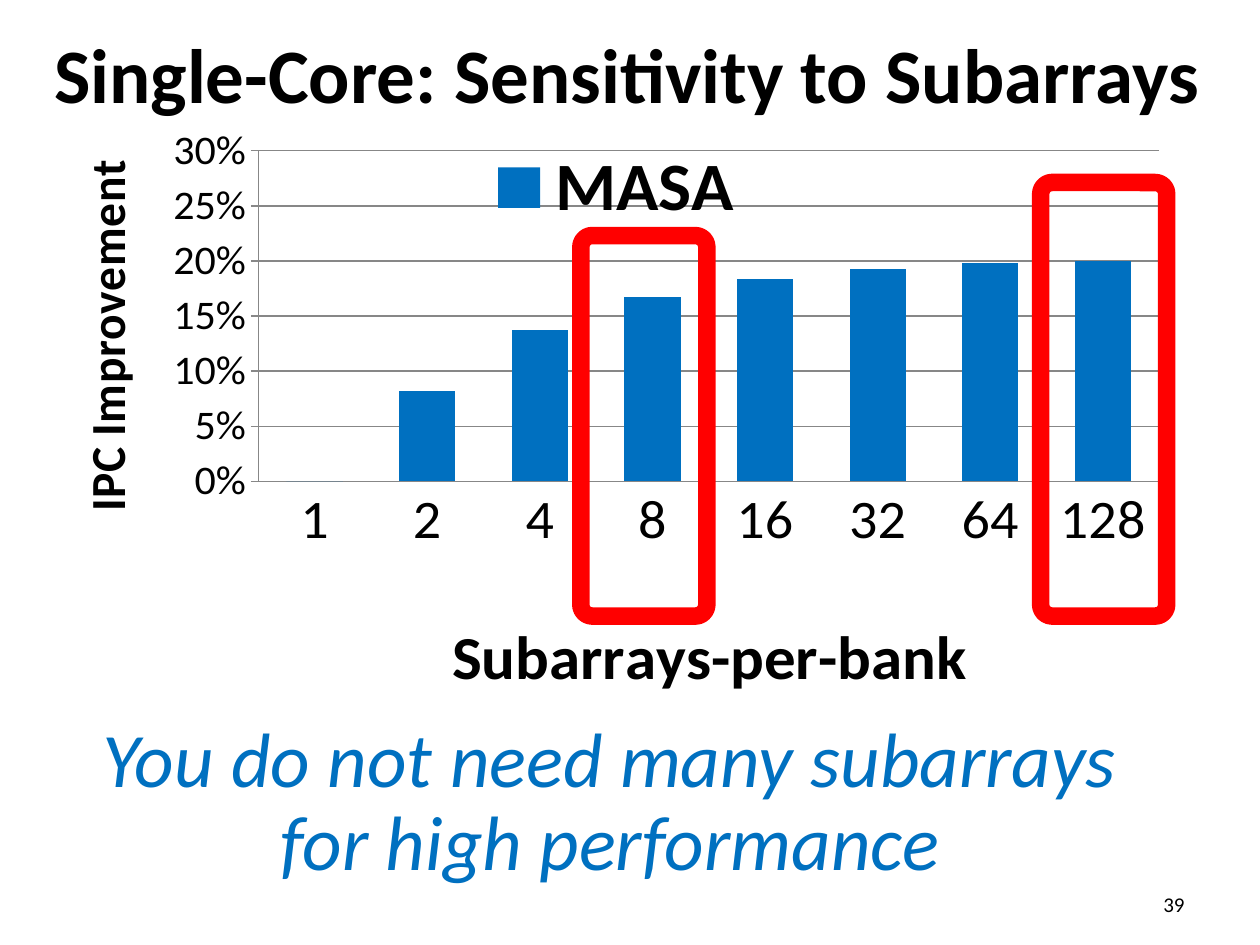
from dataclasses import dataclass
from lxml.etree import SubElement
from pptx import Presentation
from pptx.chart.data import CategoryChartData
from pptx.dml.color import RGBColor
from pptx.enum.chart import XL_CHART_TYPE, XL_LEGEND_POSITION, XL_TICK_MARK
from pptx.enum.shapes import MSO_SHAPE
from pptx.enum.text import MSO_ANCHOR, PP_ALIGN
from pptx.oxml.ns import qn
from pptx.util import Cm, Pt

FONT = "Calibri"
HUES = {"ink": "000000", "blue": "0070C0", "red": "FF0000", "grid": "878787"}


@dataclass
class Box:
    """Place on the slide, in centimetres."""
    left: float
    top: float
    width: float
    height: float

    def spots(self) -> tuple:
        """Give the place as lengths."""
        return Cm(self.left), Cm(self.top), Cm(self.width), Cm(self.height)


@dataclass
class Label:
    """Text block with its look."""
    box: Box
    text: str
    size: int
    align: PP_ALIGN = PP_ALIGN.CENTER
    anchor: MSO_ANCHOR = MSO_ANCHOR.MIDDLE
    hue: str = "ink"
    bold: bool = False
    slant: bool = False
    space: float = 1.0
    inset: float = 0.25


def hue(name: str) -> RGBColor:
    """Look up a colour."""
    return RGBColor.from_string(HUES[name])


def style(font, size: int, name: str = "ink", bold: bool = False) -> None:
    """Set the look of a font."""
    font.name, font.size, font.bold = FONT, Pt(size), bold
    font.color.rgb = hue(name)


def add_label(slide, item: Label) -> None:
    """Draw a text block."""
    frame = slide.shapes.add_textbox(*item.box.spots()).text_frame
    frame.word_wrap = True
    frame.vertical_anchor = item.anchor
    frame.margin_left = frame.margin_right = Cm(item.inset)
    para = frame.paragraphs[0]
    para.alignment, para.line_spacing = item.align, item.space
    run = para.add_run()
    run.text = item.text
    style(run.font, item.size, item.hue, item.bold)
    run.font.italic = item.slant


def add_ring(slide, box: Box) -> None:
    """Draw a red ring round one bar."""
    ring = slide.shapes.add_shape(MSO_SHAPE.ROUNDED_RECTANGLE, *box.spots())
    ring.adjustments[0] = 0.09
    ring.shadow.inherit = False
    ring.fill.background()
    ring.line.color.rgb = hue("red")
    ring.line.width = Pt(10)


def pin(node, prior: str | None, inner: bool = False, **spots: float) -> None:
    """Fix the layout of a chart part."""
    for old in node.findall(qn("c:layout")):
        node.remove(old)
    lay = SubElement(node, qn("c:layout"))
    hand = SubElement(lay, qn("c:manualLayout"))
    if inner:
        SubElement(hand, qn("c:layoutTarget")).set("val", "inner")
    for key in ("x", "y"):
        SubElement(hand, qn(f"c:{key}Mode")).set("val", "edge")
    for key, val in spots.items():
        SubElement(hand, qn(f"c:{key}")).set("val", str(val))
    if prior:
        node.find(qn(prior)).addnext(lay)
    else:
        node.insert(0, lay)


def set_axis(axis, title: str, big: int, small: int, tick: XL_TICK_MARK) -> None:
    """Style an axis and its title."""
    axis.has_title = True
    run = axis.axis_title.text_frame.paragraphs[0].add_run()
    run.text = title
    style(run.font, big, bold=True)
    style(axis.tick_labels.font, small)
    axis.major_tick_mark, axis.minor_tick_mark = tick, XL_TICK_MARK.NONE
    axis.format.line.color.rgb = hue("grid")


def add_bars(slide, box: Box) -> None:
    """Draw the column chart."""
    data = CategoryChartData(number_format="0%")
    data.categories = [str(2 ** step) for step in range(8)]
    data.add_series("MASA", [0, 0.082, 0.137, 0.167, 0.184, 0.193, 0.198, 0.2])
    chart = slide.shapes.add_chart(
        XL_CHART_TYPE.COLUMN_CLUSTERED, *box.spots(), data).chart
    chart.has_title = False
    style(chart.font, 10)
    plot = chart.plots[0]
    plot.gap_width, plot.vary_by_categories = 100, False
    fill = plot.series[0].format.fill
    fill.solid()
    fill.fore_color.rgb = hue("blue")

    set_axis(chart.category_axis, "Subarrays-per-bank", 36, 32, XL_TICK_MARK.NONE)
    axis = chart.value_axis
    set_axis(axis, "IPC Improvement", 28, 24, XL_TICK_MARK.OUTSIDE)
    axis.minimum_scale, axis.maximum_scale, axis.major_unit = 0, 0.3, 0.05
    axis.tick_labels.number_format = "0%"
    axis.tick_labels.number_format_is_linked = False
    axis.has_major_gridlines = True
    axis.major_gridlines.format.line.color.rgb = hue("grid")

    chart.has_legend = True
    chart.legend.position = XL_LEGEND_POSITION.TOP
    chart.legend.include_in_layout = True
    style(chart.legend.font, 40, bold=True)

    root = chart.element
    body = root.xpath(".//c:valAx/c:title//a:bodyPr")[0]
    body.set("rot", "-5400000")
    body.set("vert", "horz")
    pin(root.xpath(".//c:plotArea")[0], None, True, x=0.19, y=0.06, w=0.79, h=0.57)
    pin(root.xpath(".//c:legend")[0], "c:legendPos", x=0.38, y=0.03)
    pin(root.xpath(".//c:catAx/c:title")[0], "c:tx", x=0.35, y=0.84)
    pin(root.xpath(".//c:valAx/c:title")[0], "c:tx", x=0.02, y=0.08)


def main() -> None:
    """Build the slide and save it."""
    deck = Presentation()
    deck.slide_width, deck.slide_height = Cm(25.4), Cm(19.05)
    slide = deck.slides.add_slide(deck.slide_layouts[6])
    add_label(slide, Label(Box(0.8, 0.2, 23.7, 2.54),
                           "Single-Core: Sensitivity to Subarrays", 44,
                           bold=True, inset=0))
    add_label(slide, Label(Box(18.21, 17.78, 5.92, 0.89), "39", 12, PP_ALIGN.RIGHT))
    add_bars(slide, Box(0.84, 2.34, 22.99, 12.07))
    base = 12.42
    for left, top in ((20.98, 3.68), (11.71, 4.75)):
        add_ring(slide, Box(left, top, 2.54, base - top))
    add_label(slide, Label(Box(1.52, 14.4, 21.56, 3.63),
                           "You do not need many subarrays for high performance", 44,
                           anchor=MSO_ANCHOR.TOP, hue="blue", slant=True, space=0.9))
    deck.save("out.pptx")


if __name__ == "__main__":
    main()
